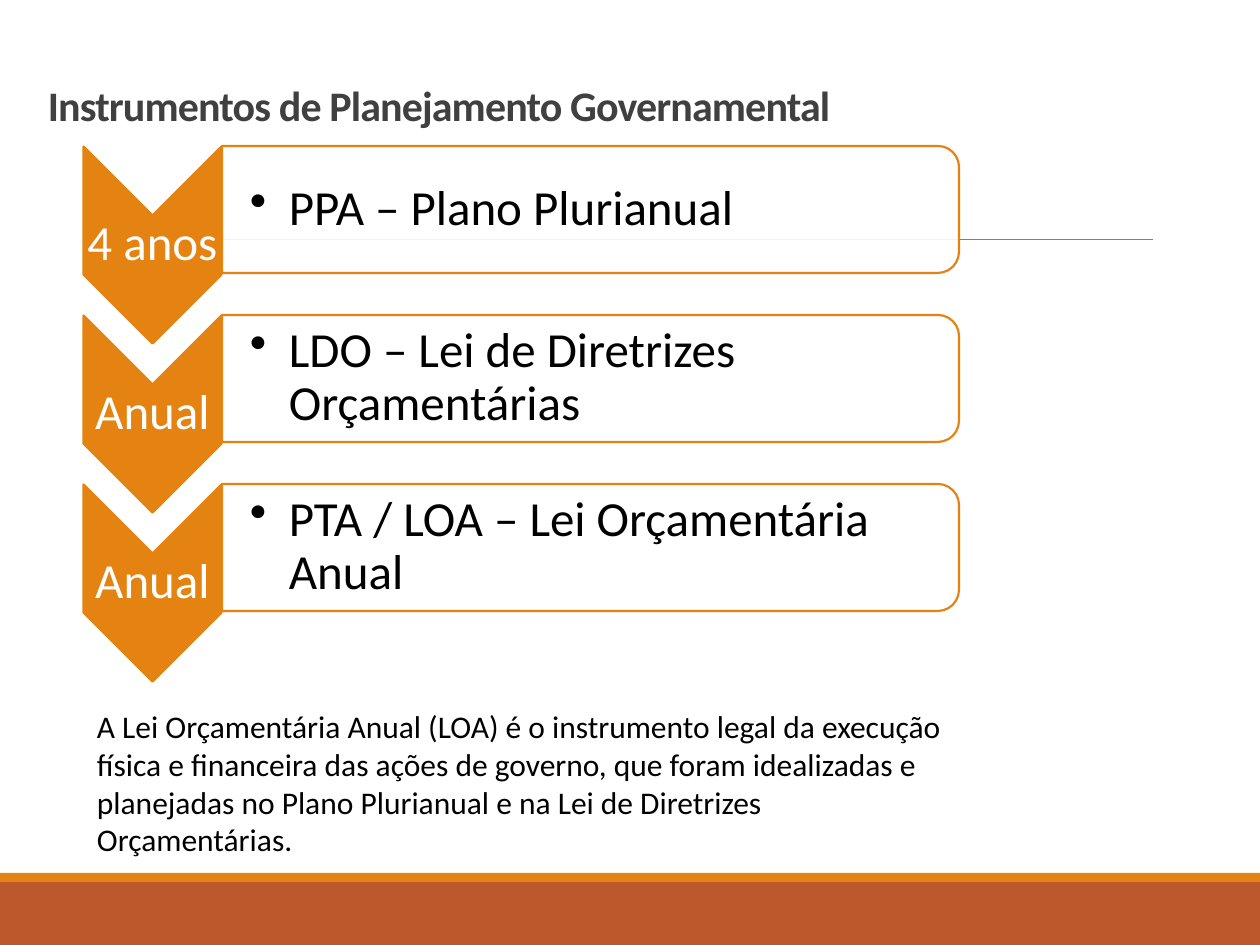
"""Build a slide on the instruments of government planning: PPA, LDO and LOA."""
import pptx
import pptx.dml.color
import pptx.enum.shapes
import pptx.enum.text
import pptx.oxml
import pptx.oxml.ns
import pptx.util

PX = 914400 // 126
ORANGE, RUST, WHITE, BLACK = "E48312", "BD582C", "FFFFFF", "000000"
SHAPES = pptx.enum.shapes.MSO_SHAPE
ANCHOR = pptx.enum.text.MSO_ANCHOR
ALIGN = pptx.enum.text.PP_ALIGN
color = pptx.dml.color.RGBColor.from_string
qn = pptx.oxml.ns.qn

presentation = pptx.Presentation()
presentation.slide_width = pptx.util.Inches(10)
presentation.slide_height = pptx.util.Inches(7.5)
slide = presentation.slides.add_slide(presentation.slide_layouts[6])


def add_box(kind, box, fill, line=None, rotation=0):
    shape = slide.shapes.add_shape(kind, *[value * PX for value in box])
    shape.shadow.inherit = False
    shape.rotation = rotation
    shape.fill.solid()
    shape.fill.fore_color.rgb = color(fill)
    if line:
        shape.line.color.rgb = color(line)
        shape.line.width = pptx.util.Pt(1.25)
    else:
        shape.line.fill.background()
    return shape


def add_text(text, box, size, fill=BLACK, bold=False, anchor=ANCHOR.TOP, align=ALIGN.LEFT,
             spacing=1.0, insets=(13, 6, 13, 6), wrap=True, tracking=0, hanging=0):
    shape = slide.shapes.add_textbox(*[value * PX for value in box])
    frame = shape.text_frame
    frame.word_wrap = wrap
    frame.vertical_anchor = anchor
    frame.margin_left, frame.margin_top, frame.margin_right, frame.margin_bottom = [
        value * PX for value in insets]
    paragraph = frame.paragraphs[0]
    paragraph.alignment = align
    paragraph.line_spacing = spacing
    run = paragraph.add_run()
    run.text = text
    run.font.name = "Calibri"
    run.font.size = pptx.util.Pt(size)
    run.font.bold = bold
    run.font.color.rgb = color(fill)
    if tracking:
        run.font._element.set("spc", str(tracking))
    if hanging:
        properties = paragraph._p.get_or_add_pPr()
        properties.set("marL", str(hanging * PX))
        properties.set("indent", str(-hanging * PX))
        bullet = pptx.oxml.parse_xml(f'<a:buChar {pptx.oxml.ns.nsdecls("a")} char="•"/>')
        properties.append(bullet)
    return shape


add_box(SHAPES.RECTANGLE, (0, 882, 1260, 63), RUST)
add_box(SHAPES.RECTANGLE, (0, 873, 1260, 9), ORANGE)

rule = slide.shapes.add_connector(
    pptx.enum.shapes.MSO_CONNECTOR.STRAIGHT, 123 * PX, 239 * PX, 1153 * PX, 239 * PX)
rule.line.color.rgb = color("808080")
rule.line.width = pptx.util.Pt(0.5)
rule._element.spPr.append(pptx.oxml.parse_xml(f'<a:effectLst {pptx.oxml.ns.nsdecls("a")}/>'))

add_text("Instrumentos de Planejamento Governamental", (35, 45, 973, 91), 24, fill="404040",
         bold=True, anchor=ANCHOR.BOTTOM, spacing=0.85, tracking=-50)

instruments = [
    ("4 anos", "PPA – Plano Plurianual"),
    ("Anual", "LDO – Lei de Diretrizes Orçamentárias"),
    ("Anual", "PTA / LOA – Lei Orçamentária Anual"),
]
for index, (period, instrument) in enumerate(instruments):
    top = 146 + 169 * index
    add_box(SHAPES.CHEVRON, (54, top + 30, 197, 138), ORANGE, ORANGE, rotation=90)
    add_text(period, (84, top + 69, 137, 59), 28, fill=WHITE, anchor=ANCHOR.MIDDLE,
             align=ALIGN.CENTER, spacing=0.9, insets=(2, 2, 2, 2), wrap=False)
    panel = add_box(SHAPES.ROUND_2_SAME_RECTANGLE, (527, top - 305, 127, 737),
                    WHITE, ORANGE, rotation=90)
    panel_color = panel._element.spPr.find(qn("a:solidFill")).find(qn("a:srgbClr"))
    panel_color.append(pptx.oxml.parse_xml(
        f'<a:alpha {pptx.oxml.ns.nsdecls("a")} val="90000"/>'))
    add_text(instrument, (222, top + 6, 731, 115), 28, anchor=ANCHOR.MIDDLE, spacing=0.9,
             insets=(28, 2, 2, 2), hanging=39)

summary = add_text(
    "A Lei Orçamentária Anual (LOA) é o instrumento legal da execução física e financeira "
    "das ações de governo, que foram idealizadas e planejadas no Plano Plurianual e na Lei "
    "de Diretrizes Orçamentárias.", (84, 701, 874, 165), 18)
summary.text_frame.auto_size = pptx.enum.text.MSO_AUTO_SIZE.SHAPE_TO_FIT_TEXT

presentation.save("out.pptx")
